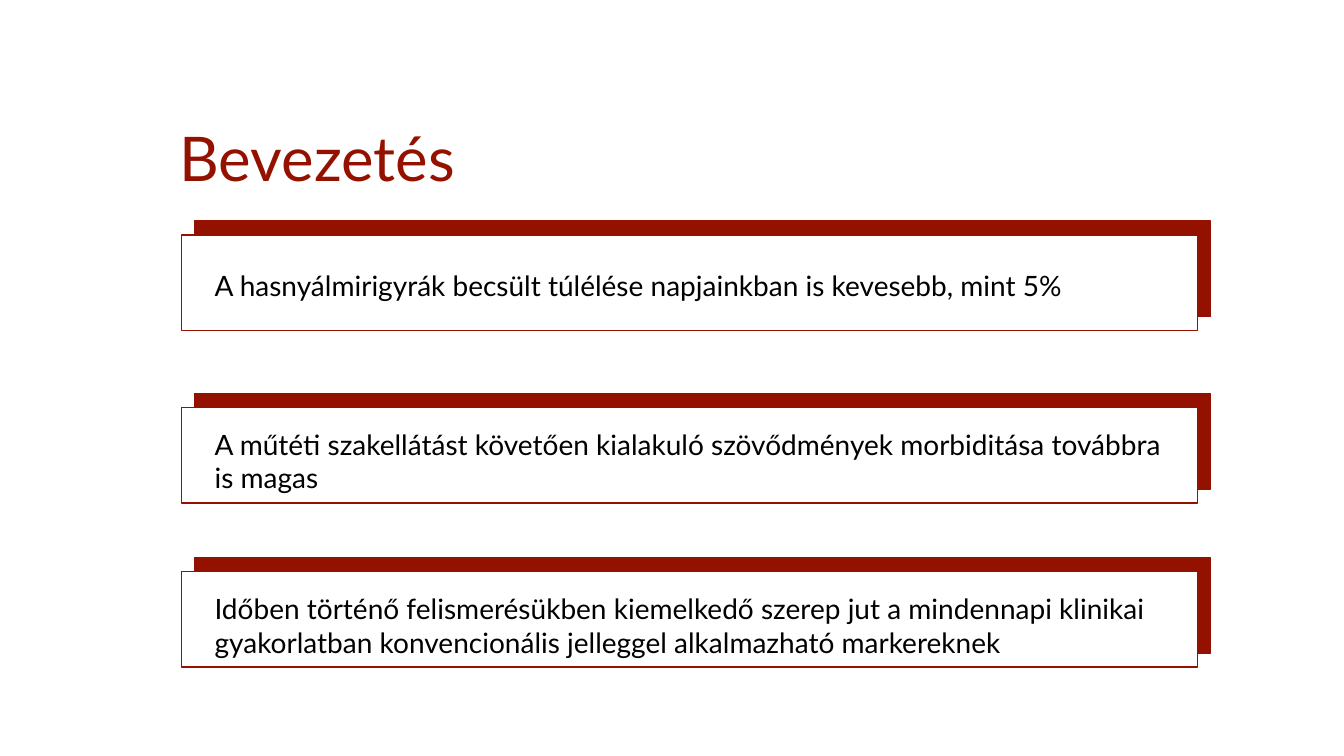
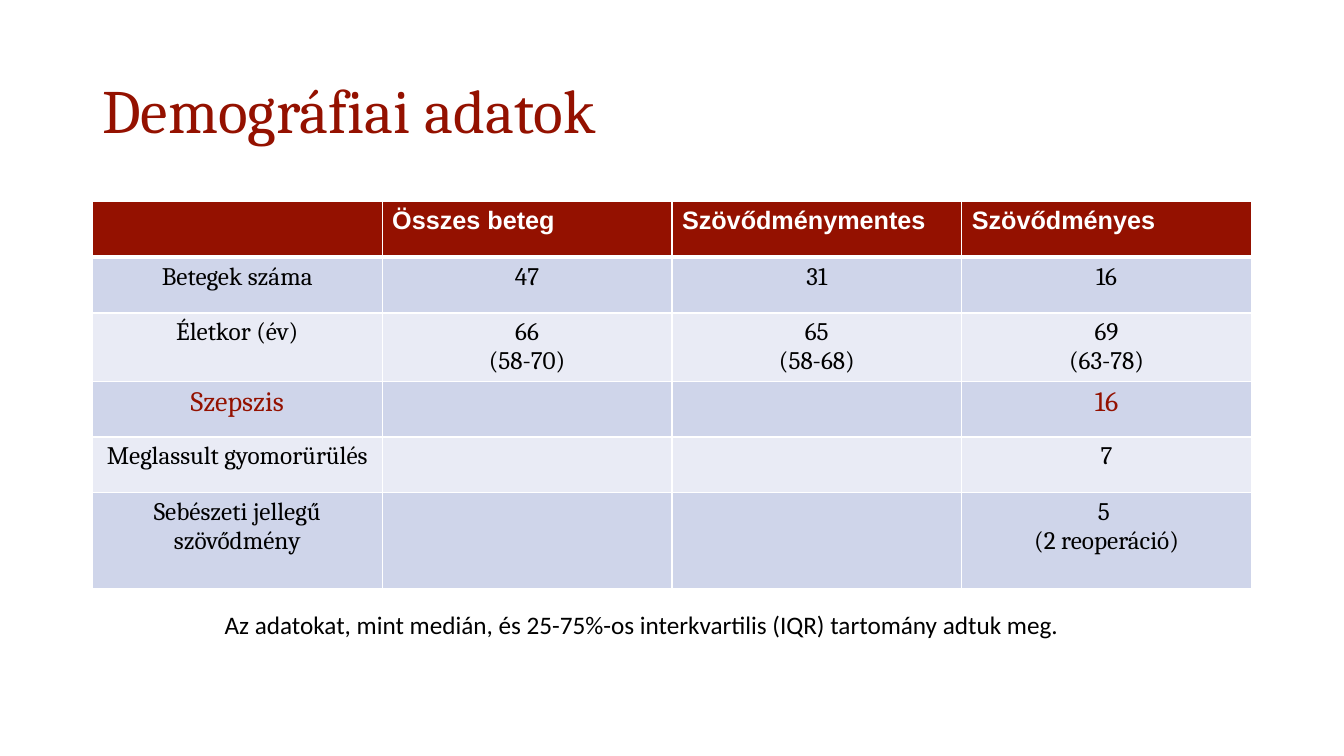
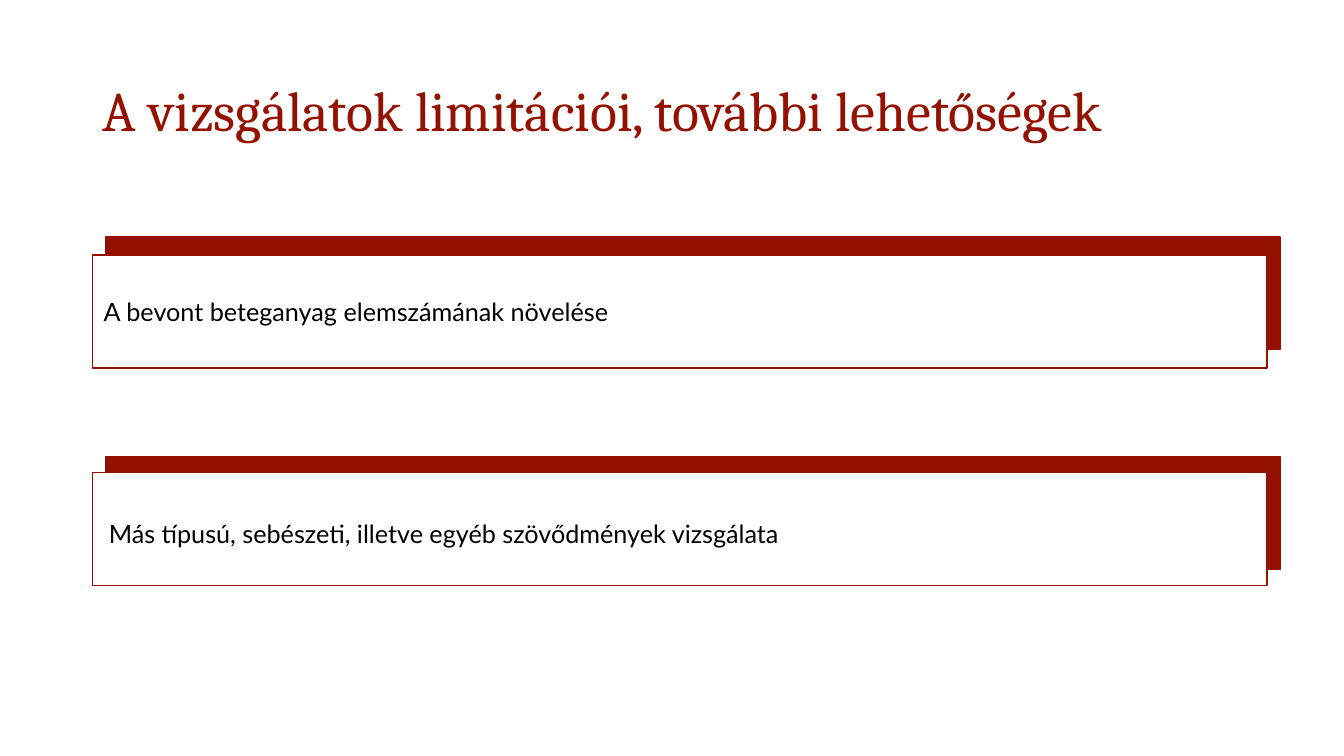
from lxml.etree import SubElement
from pptx import Presentation
from pptx.dml.color import RGBColor
from pptx.enum.shapes import MSO_SHAPE
from pptx.enum.text import MSO_ANCHOR, MSO_AUTO_SIZE, PP_ALIGN
from pptx.oxml.ns import qn
from pptx.util import Pt

# Shared style
RED = RGBColor(0x94, 0x11, 0x00)
WHITE = RGBColor(0xFF, 0xFF, 0xFF)
BLACK = RGBColor(0x00, 0x00, 0x00)
BAND_DARK = RGBColor(0xCF, 0xD5, 0xEA)
BAND_LIGHT = RGBColor(0xE9, 0xEB, 0xF5)
TITLE_BOX = (66, 28.75, 828, 104.4)
TITLE_ONLY_LAYOUT = 5


class Deck:
    """Holds the style and the slide being built."""

    def __init__(self):
        self.presentation = Presentation()
        self.presentation.slide_width = Pt(960)
        self.presentation.slide_height = Pt(540)
        self.slide = None

    def add_slide(self):
        layout = self.presentation.slide_layouts[TITLE_ONLY_LAYOUT]
        self.slide = self.presentation.slides.add_slide(layout)

    def add_text_run(self, paragraph, text, size, font, color=BLACK, bold=False):
        run = paragraph.add_run()
        run.text = text
        run.font.size = Pt(size)
        run.font.name = font
        run.font.color.rgb = color
        run.font.bold = bold

    def title(self, text, size=44, font="Cambria", box=TITLE_BOX,
              anchor=MSO_ANCHOR.MIDDLE, line_spacing=0.9):
        shape = self.slide.shapes.title
        shape.left, shape.top, shape.width, shape.height = map(Pt, box)
        frame = shape.text_frame
        frame.auto_size = MSO_AUTO_SIZE.NONE
        frame.vertical_anchor = anchor
        frame.word_wrap = True
        paragraph = frame.paragraphs[0]
        paragraph.alignment = PP_ALIGN.LEFT
        paragraph.line_spacing = line_spacing
        self.add_text_run(paragraph, text, size, font, RED)

    def text(self, text, left, top, width, height, size, font="Lato"):
        box = self.slide.shapes.add_textbox(*map(Pt, (left, top, width, height)))
        frame = box.text_frame
        frame.word_wrap = True
        frame.auto_size = MSO_AUTO_SIZE.SHAPE_TO_FIT_TEXT
        self.add_text_run(frame.paragraphs[0], text, size, font)

    def rectangle(self, left, top, width, height, fill):
        shape = self.slide.shapes.add_shape(
            MSO_SHAPE.RECTANGLE, *map(Pt, (left, top, width, height)))
        shape.shadow.inherit = False
        shape.fill.solid()
        shape.fill.fore_color.rgb = fill
        shape.line.color.rgb = RED
        shape.line.width = Pt(1)

    def card(self, left, top, width, height, rise):
        """White card on a red plate shifted up and to the right."""
        self.rectangle(left + 9.4, top - rise, width, height, RED)
        self.rectangle(left, top, width, height, WHITE)

    def cell_style(self, cell, fill, top=1, bottom=1):
        properties = cell._tc.get_or_add_tcPr()
        for side, width in (("L", 1), ("R", 1), ("T", top), ("B", bottom)):
            line = SubElement(properties, qn(f"a:ln{side}"), w=str(Pt(width)))
            solid = SubElement(line, qn("a:solidFill"))
            SubElement(solid, qn("a:srgbClr"), val=str(WHITE))
        cell.fill.solid()
        cell.fill.fore_color.rgb = fill

    def table(self, rows, heights, left, top, width, highlighted):
        frame = self.slide.shapes.add_table(
            len(rows), len(rows[0]), Pt(left), Pt(top), Pt(width), Pt(sum(heights)))
        table = frame.table
        table.first_row = table.horz_banding = False
        for row_index, (values, height) in enumerate(zip(rows, heights)):
            table.rows[row_index].height = Pt(height)
            header = row_index == 0
            if header:
                fill = RED
                style = dict(size=18, font="Arial", color=WHITE, bold=True)
            else:
                fill = BAND_DARK if row_index % 2 else BAND_LIGHT
                style = dict(size=18, font="Cambria")
            if row_index == highlighted:
                style.update(size=20, color=RED)
            for column, value in enumerate(values):
                cell = table.cell(row_index, column)
                self.cell_style(cell, fill, top=3 if row_index == 1 else 1,
                                bottom=3 if header else 1)
                if not value:
                    continue
                for index, line in enumerate(value.split("\n")):
                    text_frame = cell.text_frame
                    paragraph = (text_frame.add_paragraph() if index
                                 else text_frame.paragraphs[0])
                    paragraph.alignment = PP_ALIGN.LEFT if header else PP_ALIGN.CENTER
                    self.add_text_run(paragraph, line, **style)


def introduction(deck):
    deck.add_slide()
    deck.title("Bevezetés", font="Lato", box=(121, 82, 256, 60.5),
               anchor=MSO_ANCHOR.TOP, line_spacing=1)
    # Card top, text inset from card top, statement
    statements = (
        (167.8, 20.1, "A hasnyálmirigyrák becsült túlélése napjainkban is kevesebb, mint 5%"),
        (290.9, 10.8, "A műtéti szakellátást követően kialakuló szövődmények "
                      "morbiditása továbbra is magas"),
        (408.2, 10.8, "Időben történő felismerésükben kiemelkedő szerep jut a mindennapi "
                      "klinikai gyakorlatban konvencionális jelleggel alkalmazható markereknek"),
    )
    for top, inset, statement in statements:
        deck.card(129.6, top, 725.8, 68.4, rise=10)
        deck.text(statement, 146.2, top + inset, 693.4, 55.5, 20)


def demographics(deck):
    deck.add_slide()
    deck.title("Demográfiai adatok")
    rows = (
        ("", "Összes beteg", "Szövődménymentes", "Szövődményes"),
        ("Betegek száma", "47", "31", "16"),
        ("Életkor (év)", "66\n(58-70)", "65\n(58-68)", "69\n(63-78)"),
        ("Szepszis", "", "", "16"),
        ("Meglassult gyomorürülés", "", "", "7"),
        ("Sebészeti jellegű szövődmény", "", "", "5 \n(2 reoperáció)"),
    )
    deck.table(rows, [39.8] * 5 + [68.4], 66, 144, 828, highlighted=3)
    deck.text("Az adatokat, mint medián, és 25-75%-os interkvartilis (IQR) tartomány adtuk meg.",
              153.4, 432, 640, 28.8, 18, "Calibri")


def limitations(deck):
    deck.add_slide()
    deck.title("A vizsgálatok limitációi, további lehetőségek", size=40)
    # Card top, plate rise, text left and top, statement
    statements = (
        (182.2, 13, 67, 208.1, "A bevont beteganyag elemszámának növelése"),
        (337.7, 11.5, 70.6, 366.5,
         "Más típusú, sebészeti, illetve egyéb szövődmények vizsgálata"),
    )
    for top, rise, text_left, text_top, statement in statements:
        deck.card(66.2, top, 838.8, 80.6, rise)
        deck.text(statement, text_left, text_top, 838, 28.8, 18)


def main():
    deck = Deck()
    introduction(deck)
    demographics(deck)
    limitations(deck)
    deck.presentation.save("out.pptx")


if __name__ == "__main__":
    main()
